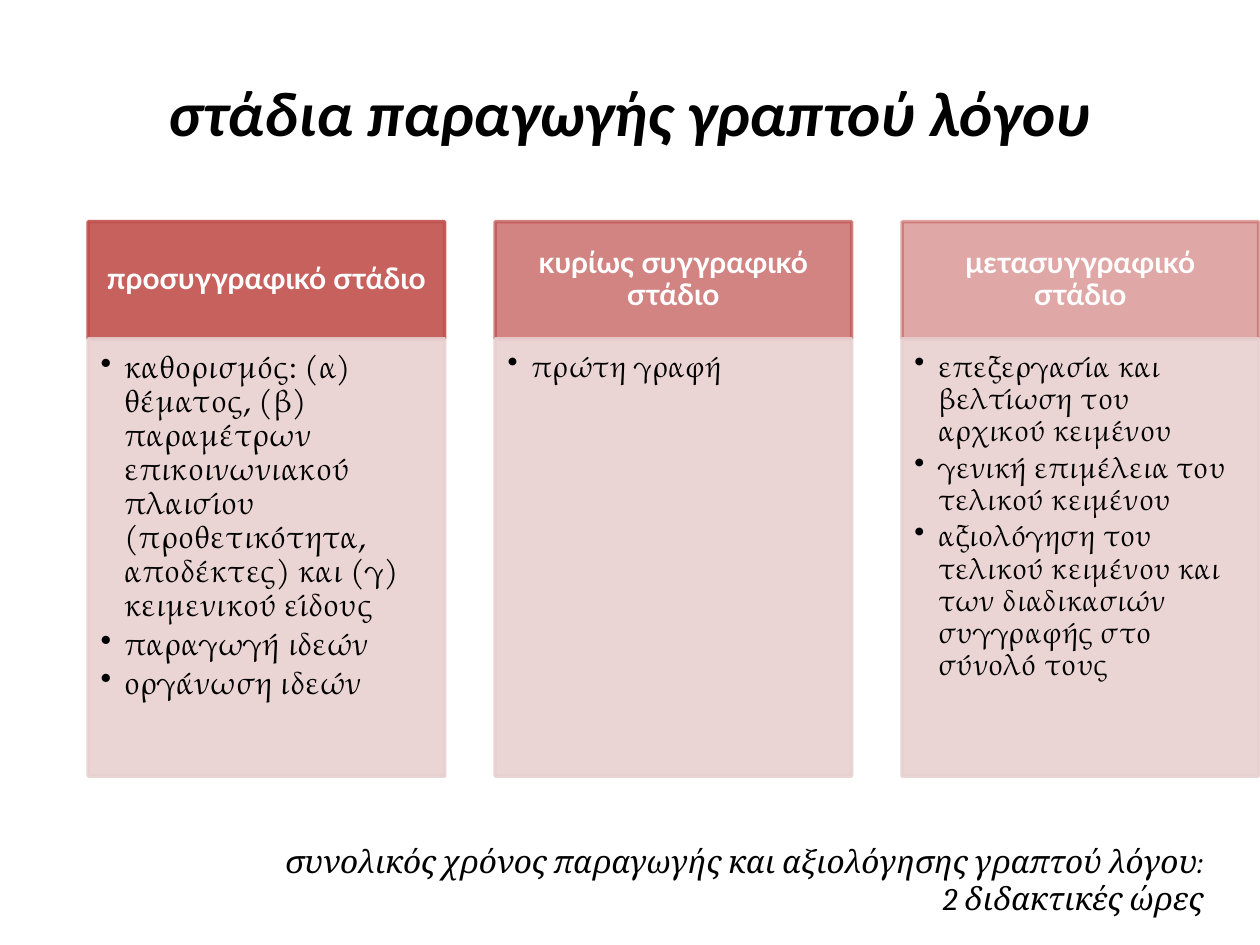
import pptx
import pptx.util
import pptx.dml.color
import pptx.enum.shapes
import pptx.enum.text
import pptx.oxml.ns
from lxml import etree

Inches = pptx.util.Inches
Pt = pptx.util.Pt
RGBColor = pptx.dml.color.RGBColor
PP_ALIGN = pptx.enum.text.PP_ALIGN
MSO_ANCHOR = pptx.enum.text.MSO_ANCHOR
qn = pptx.oxml.ns.qn

RED = RGBColor(0xC0, 0x50, 0x4D)
PINK = RGBColor(0xE8, 0xD0, 0xD0)
WHITE = RGBColor(0xFF, 0xFF, 0xFF)
BLACK = RGBColor(0x00, 0x00, 0x00)

COLUMN_LEFT = 0.7
COLUMN_STEP = 3.23
COLUMN_WIDTH = 2.83
HEADER_TOP = 1.76
HEADER_HEIGHT = 0.93
BODY_HEIGHT = 3.47

STAGES = [
    ("προσυγγραφικό στάδιο", 90, 18, [
        "καθορισμός: (α) θέματος, (β) παραμέτρων επικοινωνιακού πλαισίου "
        "(προθετικότητα, αποδέκτες) και (γ) κειμενικού είδους",
        "παραγωγή ιδεών",
        "οργάνωση ιδεών",
    ]),
    ("κυρίως συγγραφικό στάδιο", 70, 17, ["πρώτη γραφή"]),
    ("μετασυγγραφικό στάδιο", 50, 17, [
        "επεξεργασία και βελτίωση του αρχικού κειμένου",
        "γενική επιμέλεια του τελικού κειμένου",
        "αξιολόγηση του τελικού κειμένου και των διαδικασιών συγγραφής στο σύνολό τους",
    ]),
]


def add_panel(slide, left, top, height, color, opacity):
    shape = slide.shapes.add_shape(
        pptx.enum.shapes.MSO_SHAPE.RECTANGLE,
        Inches(left), Inches(top), Inches(COLUMN_WIDTH), Inches(height))
    shape.shadow.inherit = False
    shape.fill.solid()
    shape.fill.fore_color.rgb = color
    shape.line.color.rgb = color
    shape.line.width = Pt(2)
    for element in shape._element.spPr.iter(qn("a:srgbClr")):
        etree.SubElement(element, qn("a:alpha"), val=str(opacity * 1000))
    return shape


def write_text(shape, lines, font_name, size, color, alignment, anchor, margins, bold=False, italic=False):
    text_frame = shape.text_frame
    text_frame.word_wrap = True
    text_frame.vertical_anchor = anchor
    (text_frame.margin_left, text_frame.margin_top,
     text_frame.margin_right, text_frame.margin_bottom) = map(Inches, margins)
    text_frame.text = "\n".join(lines)
    for paragraph in text_frame.paragraphs:
        paragraph.alignment = alignment
        for run in paragraph.runs:
            run.font.name = font_name
            run.font.size = Pt(size)
            run.font.color.rgb = color
            run.font.bold = bold
            run.font.italic = italic
    return text_frame.paragraphs


presentation = pptx.Presentation()
presentation.slide_width = Inches(10)
presentation.slide_height = Inches(7.5)
slide = presentation.slides.add_slide(presentation.slide_layouts[6])

title = slide.shapes.add_textbox(Inches(0.33), Inches(0.17), Inches(9.33), Inches(1.42))
write_text(title, ["στάδια παραγωγής γραπτού λόγου"], "Calibri", 36, BLACK,
           PP_ALIGN.CENTER, MSO_ANCHOR.MIDDLE, (0.1, 0.05, 0.1, 0.05), bold=True, italic=True)

for index, (heading, opacity, size, items) in enumerate(STAGES):
    left = COLUMN_LEFT + index * COLUMN_STEP
    header = add_panel(slide, left, HEADER_TOP, HEADER_HEIGHT, RED, opacity)
    for paragraph in write_text(header, [heading], "Lato", 17, WHITE, PP_ALIGN.CENTER,
                                MSO_ANCHOR.MIDDLE, (0.13, 0.08, 0.13, 0.08), bold=True):
        paragraph.line_spacing = 0.9

    body = add_panel(slide, left, HEADER_TOP + HEADER_HEIGHT, BODY_HEIGHT, PINK, 90)
    for paragraph in write_text(body, items, "TeX Gyre Pagella", size, BLACK, PP_ALIGN.LEFT,
                                MSO_ANCHOR.TOP, (0.1, 0.1, 0.13, 0.15)):
        paragraph.line_spacing = 0.9
        paragraph.space_after = Pt(size * 0.15)
        properties = paragraph._p.get_or_add_pPr()
        properties.set("marL", str(Inches(0.19)))
        properties.set("indent", str(-Inches(0.19)))
        etree.SubElement(properties, qn("a:buChar"), char="•")

footer = slide.shapes.add_textbox(Inches(0.67), Inches(6.66), Inches(8.98), Inches(0.84))
write_text(footer, ["συνολικός χρόνος παραγωγής και αξιολόγησης γραπτού λόγου:", "2 διδακτικές ώρες"],
           "Cambria", 18, BLACK, PP_ALIGN.RIGHT, MSO_ANCHOR.TOP, (0.1, 0.02, 0.1, 0.05), italic=True)

presentation.save("out.pptx")
